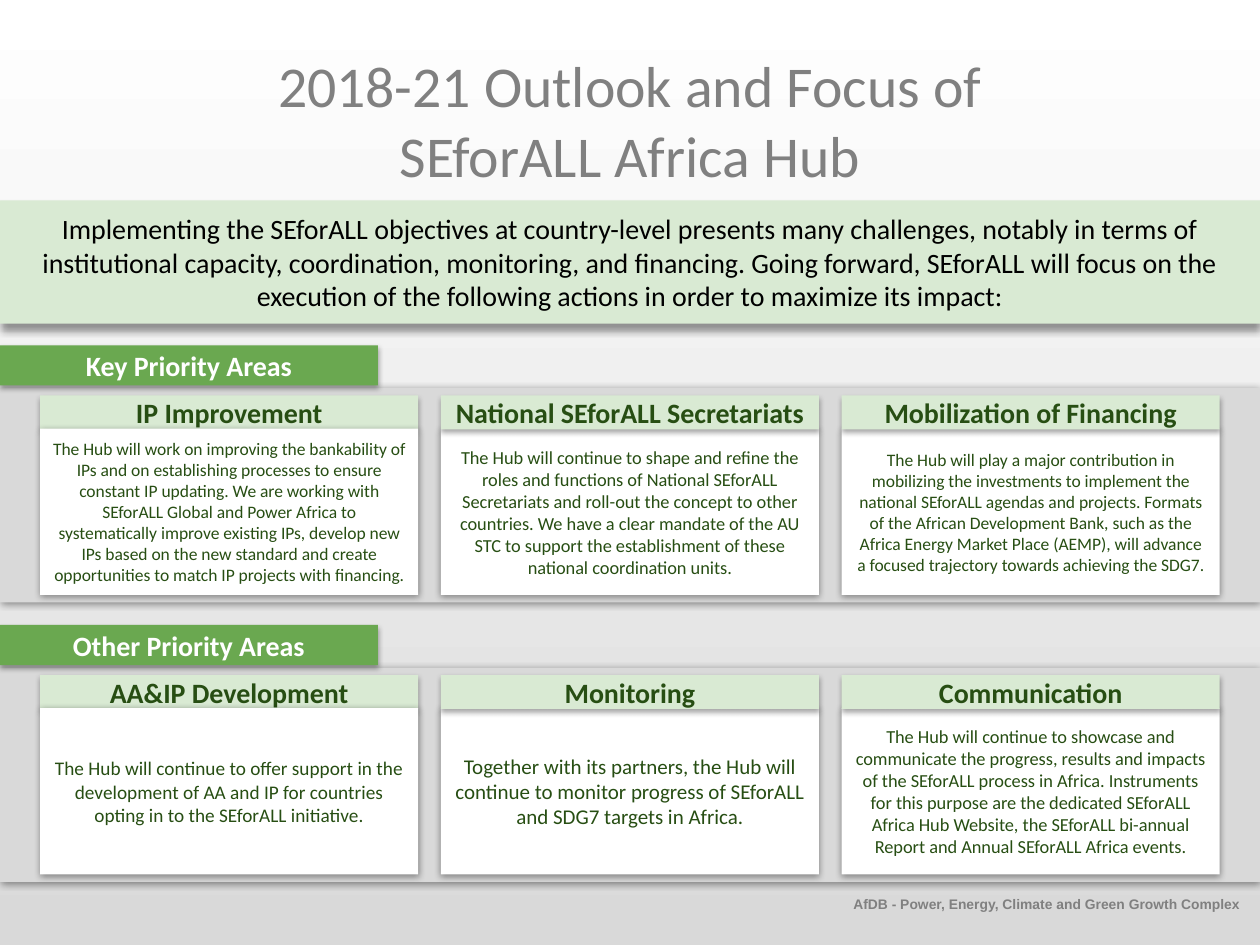
import pptx
import pptx.util
import pptx.dml.color
import pptx.enum.shapes
import pptx.enum.text
import pptx.oxml
import pptx.oxml.ns

Pt = pptx.util.Pt
ALIGN = pptx.enum.text.PP_ALIGN
ANCHOR = pptx.enum.text.MSO_ANCHOR

THEME = {
    "white": "FFFFFF", "gray": "D9D9D9", "dim": "808080", "black": "000000",
    "pale": "D9EAD3", "green": "6AA850", "dark": "274E13",
    "font": "Calibri", "foot_font": "Arial",
    "title": 33, "head": 16, "foot": 7.9,
}
SHADOWS = {
    "band": (40, 4, 4),
    "card": (40, 4, 1),
    "label": (35, 3.1, 1.8),
}

TITLE = "2018-21 Outlook and Focus of\vSEforALL Africa Hub"
INTRO = (
    "Implementing the SEforALL objectives at country-level presents many challenges, "
    "notably in terms of institutional capacity, coordination, monitoring, and financing. "
    "Going forward, SEforALL will focus on the execution of the following actions in order "
    "to maximize its impact:"
)
FOOTER = "AfDB - Power, Energy, Climate and Green Growth Complex"
ROWS = [
    ("Key Priority Areas", [
        ("IP Improvement", 10, True,
         "The Hub will work on improving the bankability of IPs and on establishing "
         "processes to ensure constant IP updating. We are working with SEforALL Global "
         "and Power Africa to systematically improve existing IPs, develop new IPs based "
         "on the new standard and create opportunities to match IP projects with financing."),
        ("National SEforALL Secretariats", 10.5, True,
         "The Hub will continue to shape and refine the roles and functions of National "
         "SEforALL Secretariats and roll-out the concept to other countries. We have a "
         "clear mandate of the AU STC to support the establishment of these national "
         "coordination units."),
        ("Mobilization of Financing", 10, False,
         "The Hub will play a major contribution in mobilizing the investments to "
         "implement the national SEforALL agendas and projects. Formats of the African "
         "Development Bank, such as the Africa Energy Market Place (AEMP), will advance "
         "a focused trajectory towards achieving the SDG7."),
    ]),
    ("Other Priority Areas", [
        ("AA&IP Development", 11, True,
         "The Hub will continue to offer support in the development of AA and IP for "
         "countries opting in to the SEforALL initiative."),
        ("Monitoring", 12, True,
         "Together with its partners, the Hub will continue to monitor progress of "
         "SEforALL and SDG7 targets in Africa."),
        ("Communication", 10.5, True,
         "The Hub will continue to showcase and communicate the progress, results and "
         "impacts of the SEforALL process in Africa. Instruments for this purpose are "
         "the dedicated SEforALL Africa Hub Website, the SEforALL bi-annual Report and "
         "Annual SEforALL Africa events."),
    ]),
]

WIDTH, HEIGHT = 720, 540
LEFT, PITCH, CARD_W = 23, 229, 216
ROW_TOP, ROW_STEP = 197.3, 159.8
PANEL_DY, HEAD_DY, BODY_DY = 24.5, 28.7, 47.6
TAG_H, PANEL_H, HEAD_H, BODY_H = 23, 122.4, 19.4, 95


def tint(name):
    return pptx.dml.color.RGBColor.from_string(THEME[name])


def write(shape, text, size, color, bold=False, font="font", align=ALIGN.CENTER,
          anchor=ANCHOR.MIDDLE, after=0, hang=0):
    frame = shape.text_frame
    frame.word_wrap = True
    frame.auto_size = pptx.enum.text.MSO_AUTO_SIZE.NONE
    frame.vertical_anchor = anchor
    para = frame.paragraphs[0]
    para.text = text
    para.alignment = align
    para.space_after = Pt(after)
    if hang:
        props = para._p.get_or_add_pPr()
        props.set("marL", "0")
        props.set("indent", str(-Pt(hang)))
    for run in para.runs:
        run.font.name = THEME[font]
        run.font.size = Pt(size)
        run.font.bold = bold
        run.font.color.rgb = tint(color)


def add_box(slide, left, top, width, height, fill, shadow):
    box = slide.shapes.add_shape(pptx.enum.shapes.MSO_SHAPE.RECTANGLE,
                                 Pt(left), Pt(top), Pt(width), Pt(height))
    box.fill.solid()
    box.fill.fore_color.rgb = tint(fill)
    box.line.fill.background()
    box.shadow.inherit = False
    alpha, blur, dist = SHADOWS[shadow]
    effects = box._element.spPr.find(pptx.oxml.ns.qn("a:effectLst"))
    effects.append(pptx.oxml.parse_xml(
        f'<a:outerShdw {pptx.oxml.ns.nsdecls("a")} blurRad="{Pt(blur)}" '
        f'dist="{Pt(dist)}" dir="5400000" rotWithShape="0">'
        f'<a:srgbClr val="{THEME["black"]}"><a:alpha val="{alpha * 1000}"/></a:srgbClr>'
        '</a:outerShdw>'))
    return box


def add_head(slide, left, top, text):
    box = add_box(slide, left, top, CARD_W, HEAD_H, "pale", "label")
    write(box, text, THEME["head"], "dark", bold=True)


def add_body(slide, left, top, text, size, hung):
    box = add_box(slide, left, top, CARD_W, BODY_H, "white", "card")
    write(box, text, size, "dark", after=6 if hung else 0, hang=9.4 if hung else 0)


def add_row(slide, top, label, cards):
    add_box(slide, 0, top + PANEL_DY, WIDTH, PANEL_H, "gray", "card")
    tag = add_box(slide, 0, top, CARD_W, TAG_H, "green", "label")
    write(tag, label, THEME["head"], "white", bold=True)
    for col, (head, size, hung, body) in enumerate(cards):
        left = LEFT + col * PITCH
        if col == 0:
            add_head(slide, left, top + HEAD_DY, head)
        add_body(slide, left, top + BODY_DY, body, size, hung)
        if col > 0:
            add_head(slide, left, top + HEAD_DY, head)


def main():
    deck = pptx.Presentation()
    deck.slide_width, deck.slide_height = Pt(WIDTH), Pt(HEIGHT)
    slide = deck.slides.add_slide(deck.slide_layouts[5])

    back = slide.background.fill
    back.gradient()
    back.gradient_angle = 270
    for stop, name in zip(back.gradient_stops, ("white", "gray")):
        stop.color.rgb = tint(name)

    title = slide.shapes.title
    title.left, title.top, title.width, title.height = Pt(131), Pt(25), Pt(458), Pt(76.5)
    write(title, TITLE, THEME["title"], "dim", anchor=ANCHOR.TOP)

    band = add_box(slide, 0, 114.5, WIDTH, 70.5, "pale", "band")
    write(band, INTRO, THEME["head"], "black", after=6)

    for row, (label, cards) in enumerate(ROWS):
        add_row(slide, ROW_TOP + row * ROW_STEP, label, cards)

    foot = slide.shapes.add_textbox(Pt(464.4), Pt(509), Pt(249), Pt(18))
    frame = foot.text_frame
    frame.margin_left = frame.margin_right = Pt(5)
    frame.margin_top = frame.margin_bottom = Pt(3)
    write(foot, FOOTER, THEME["foot"], "dim", bold=True, font="foot_font",
          align=ALIGN.RIGHT, anchor=ANCHOR.TOP)

    deck.save("out.pptx")


if __name__ == "__main__":
    main()
